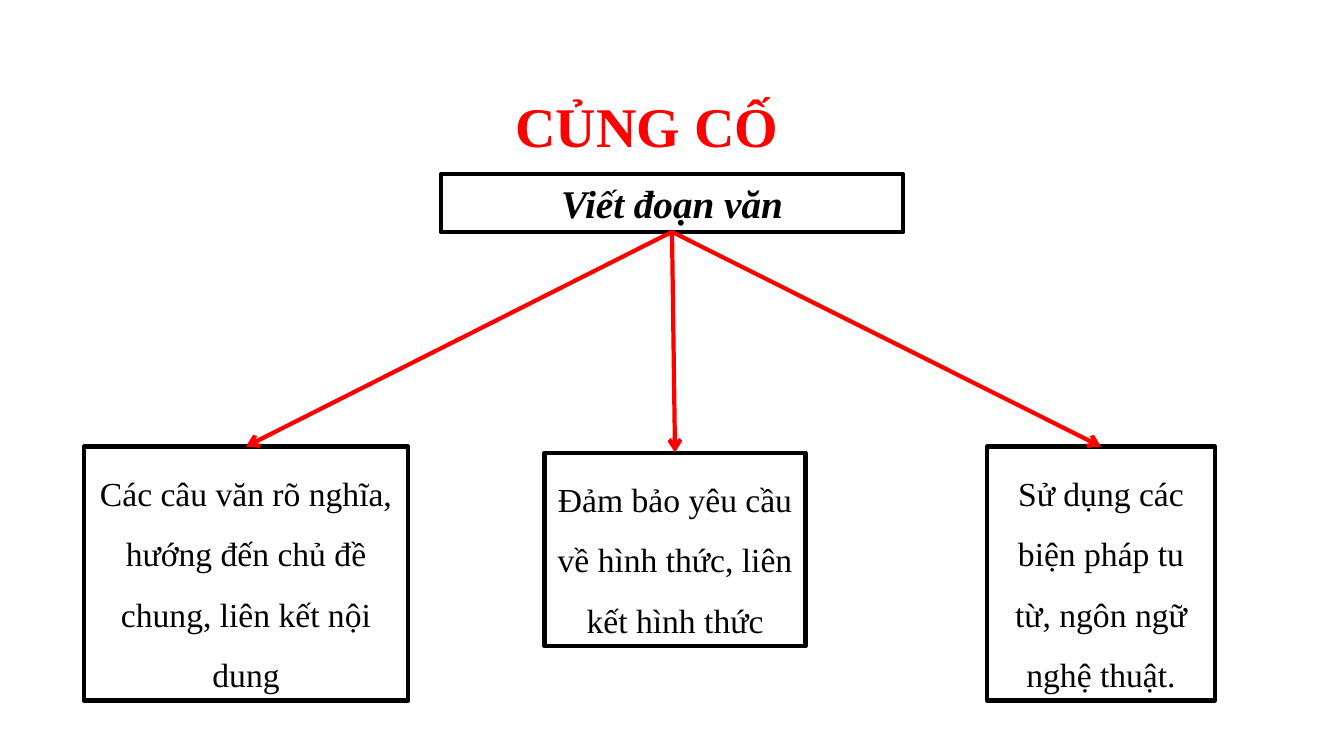
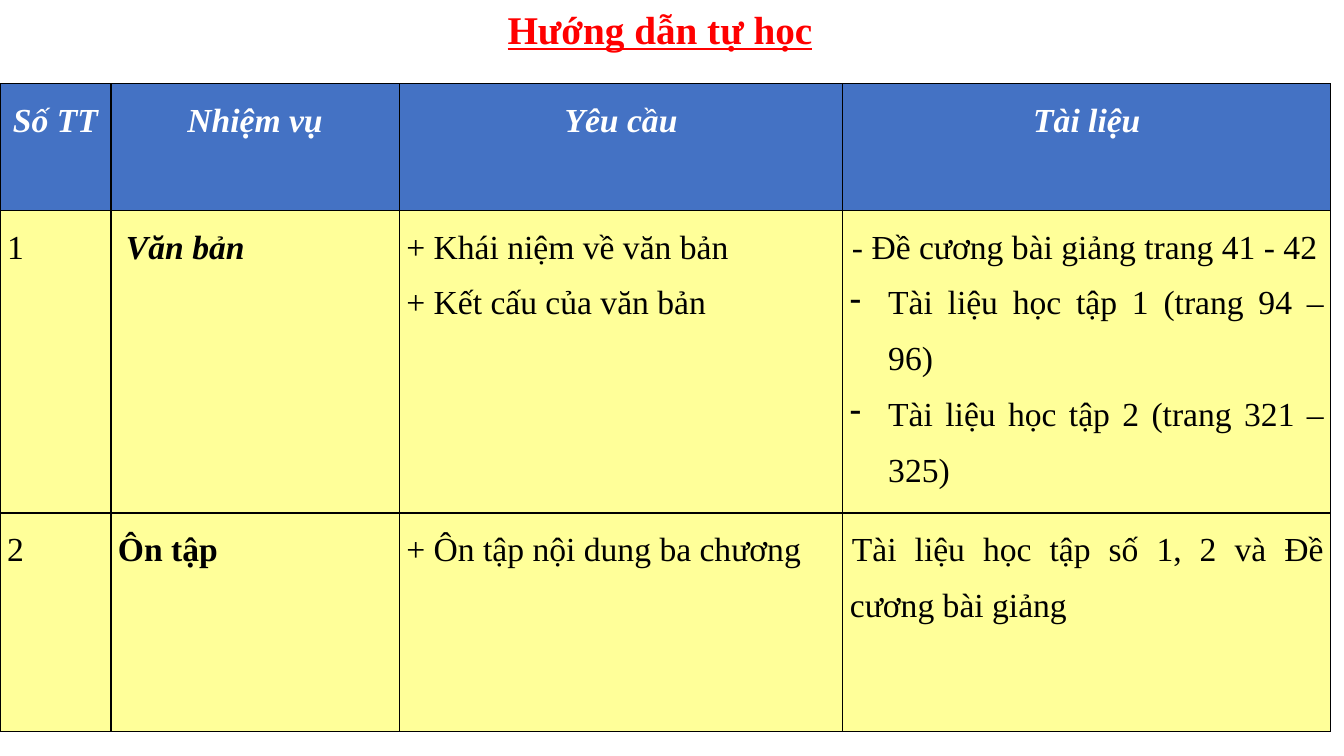
import pptx
import pptx.dml.color
import pptx.enum.dml
import pptx.enum.shapes
import pptx.enum.text
import pptx.oxml.ns
import pptx.util
import lxml.etree

RGBColor = pptx.dml.color.RGBColor
RED = RGBColor(0xFF, 0x00, 0x00)
BLACK = RGBColor(0x00, 0x00, 0x00)
WHITE = RGBColor(0xFF, 0xFF, 0xFF)
BLUE = RGBColor(0x44, 0x72, 0xC4)
YELLOW = RGBColor(0xFF, 0xFF, 0x99)

FONT = "Times New Roman"
PX = 9144  # 100 px to the inch
ALIGN = pptx.enum.text.PP_ALIGN
ANCHOR = pptx.enum.text.MSO_ANCHOR
qn = pptx.oxml.ns.qn

deck = pptx.Presentation()
deck.slide_width = 1333 * PX
deck.slide_height = 750 * PX


def style(para, size, color, align=ALIGN.CENTER, bold=False, italic=False, spacing=None):
    para.alignment = align
    para.line_spacing = spacing
    para.font.name = FONT
    para.font.size = pptx.util.Pt(size)
    para.font.color.rgb = color
    para.font.bold = bold
    para.font.italic = italic


def add_titled_page(text, left, top, width, height, size):
    page = deck.slides.add_slide(deck.slide_layouts[5])
    title = page.shapes.title
    title.left, title.top = left * PX, top * PX
    title.width, title.height = width * PX, height * PX
    title.text_frame.text = text
    title.text_frame.auto_size = pptx.enum.text.MSO_AUTO_SIZE.NONE
    title.text_frame.vertical_anchor = ANCHOR.TOP
    style(title.text_frame.paragraphs[0], size, RED, bold=True)
    return page


# Slide 1: summary diagram
page = add_titled_page("CỦNG CỐ", 291, 86, 701, 74, 40)

# Topic box first, then the three requirements
BOXES = [
    ("Viết đoạn văn", 437, 173, 459, 57),
    ("Các câu văn rõ nghĩa, hướng đến chủ đề chung, liên kết nội dung", 83, 443, 322, 252),
    ("Đảm bảo yêu cầu về hình thức, liên kết hình thức", 540, 449, 259, 192),
    ("Sử dụng các biện pháp tu từ, ngôn ngữ nghệ thuật.", 979, 443, 226, 252),
]
boxes = []
for text, left, top, width, height in BOXES:
    box = page.shapes.add_shape(pptx.enum.shapes.MSO_SHAPE.RECTANGLE,
                                left * PX, top * PX, width * PX, height * PX)
    box.shadow.inherit = False
    box.fill.solid()
    box.fill.fore_color.rgb = WHITE
    box.line.color.rgb = BLACK
    box.line.width = pptx.util.Pt(3)
    box.text_frame.word_wrap = True
    box.text_frame.text = text
    para = box.text_frame.paragraphs[0]
    if boxes:
        style(para, 24, BLACK, spacing=1.5)
    else:
        style(para, 28, BLACK, bold=True, italic=True)
    boxes.append(box)

# Arrows from the topic to each requirement
topic, *requirements = boxes
for requirement in requirements:
    arrow = page.shapes.add_connector(pptx.enum.shapes.MSO_CONNECTOR.STRAIGHT, 0, 0, 0, 0)
    arrow.begin_connect(topic, 2)
    arrow.end_connect(requirement, 0)
    arrow.line.color.rgb = RED
    arrow.line.width = pptx.util.Pt(3)
    lxml.etree.SubElement(arrow.line._get_or_add_ln(), qn("a:tailEnd"), type="arrow")
    lxml.etree.SubElement(arrow._element.spPr, qn("a:effectLst"))

# Slide 2: self-study table
page = add_titled_page("Hướng dẫn tự học", 221, 0, 867, 57, 28)
page.shapes.title.text_frame.paragraphs[0].font.underline = True

COLUMNS = [110, 286, 440, 484]
ROWS = [126, 300, 217]
TASK, SOURCE = 1, 3
CELLS = [
    [["Số TT"], ["Nhiệm vụ"], ["Yêu cầu"], ["Tài liệu"]],
    [["1"], ["Văn bản"], ["+ Khái niệm về văn bản", "+ Kết cấu của văn bản"],
     ["- Đề cương bài giảng trang 41 - 42",
      "Tài liệu học tập 1 (trang 94 – 96)",
      "Tài liệu học tập 2 (trang 321 – 325)"]],
    [["2"], ["Ôn tập"], ["+ Ôn tập nội dung ba chương"],
     ["Tài liệu học tập số 1, 2 và Đề cương bài giảng"]],
]
table = page.shapes.add_table(len(ROWS), len(COLUMNS), 0, 83 * PX,
                              sum(COLUMNS) * PX, sum(ROWS) * PX).table
for column, width in zip(table.columns, COLUMNS):
    column.width = width * PX
for row, height in zip(table.rows, ROWS):
    row.height = height * PX

for r, row in enumerate(CELLS):
    for c, lines in enumerate(row):
        cell = table.cell(r, c)
        header = r == 0
        cell.margin_left = cell.margin_right = 7 * PX
        cell.margin_top = cell.margin_bottom = 0
        cell.vertical_anchor = ANCHOR.TOP

        # Borders come before the fill in the cell properties
        properties = cell._tc.get_or_add_tcPr()
        for side in ("lnL", "lnR", "lnT", "lnB"):
            border = lxml.etree.SubElement(properties, qn("a:" + side), w=str(pptx.util.Pt(1)))
            paint = lxml.etree.SubElement(border, qn("a:solidFill"))
            lxml.etree.SubElement(paint, qn("a:srgbClr"), val=str(BLACK))
        cell.fill.solid()
        cell.fill.fore_color.rgb = BLUE if header else YELLOW

        # Text
        cell.text_frame.text = "\n".join(lines)
        if header:
            align = ALIGN.CENTER
        else:
            align = ALIGN.JUSTIFY if c == SOURCE else ALIGN.LEFT
        for i, para in enumerate(cell.text_frame.paragraphs):
            style(para, 24, WHITE if header else BLACK, align,
                  bold=header or c == TASK, italic=header or (r, c) == (1, TASK), spacing=1.5)
            settings = para._p.get_or_add_pPr()
            if (r, c) == (1, TASK):
                settings.set("indent", str(8 * PX))
            elif c == SOURCE and not header:
                settings.set("marL", str(38 * PX if i else 0))
                settings.set("indent", str(-38 * PX if i else 2 * PX))
                if i:
                    bullet = lxml.etree.Element(qn("a:buChar"), char="-")
                    settings.find(qn("a:lnSpc")).addnext(bullet)

deck.save("out.pptx")
